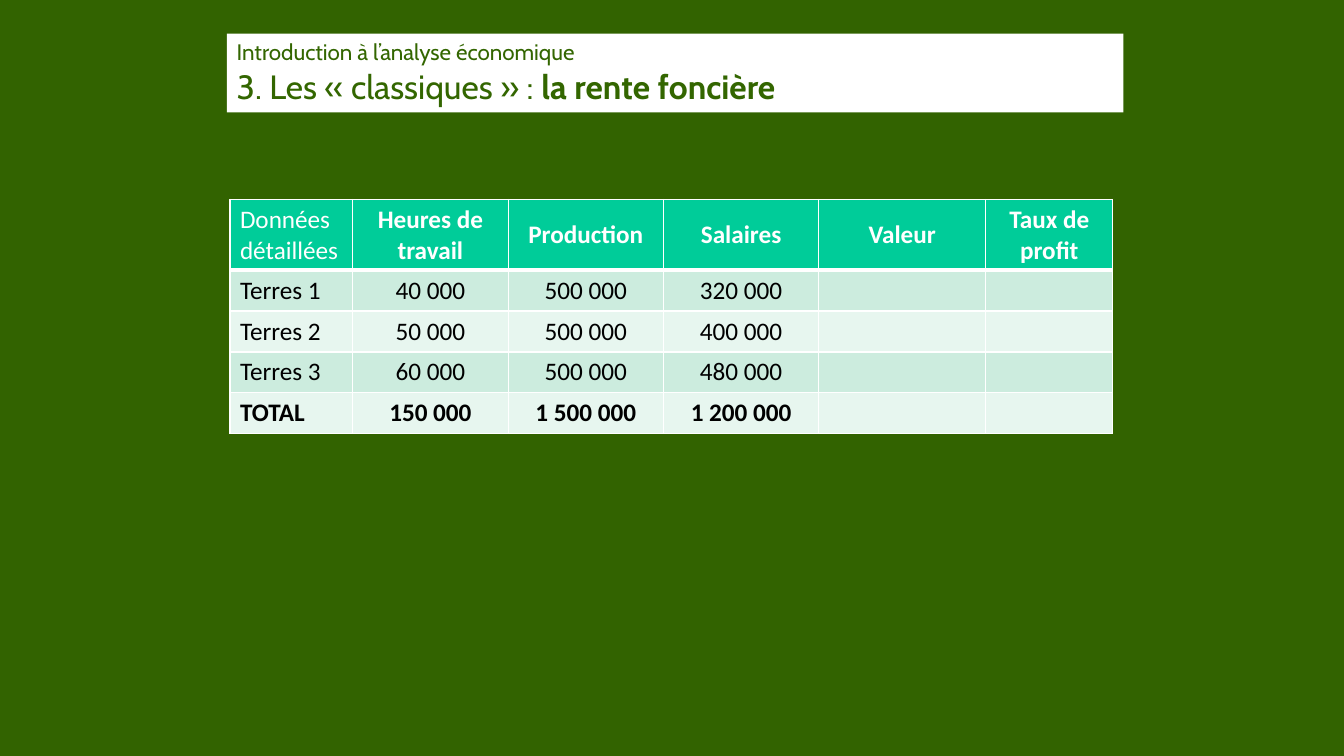
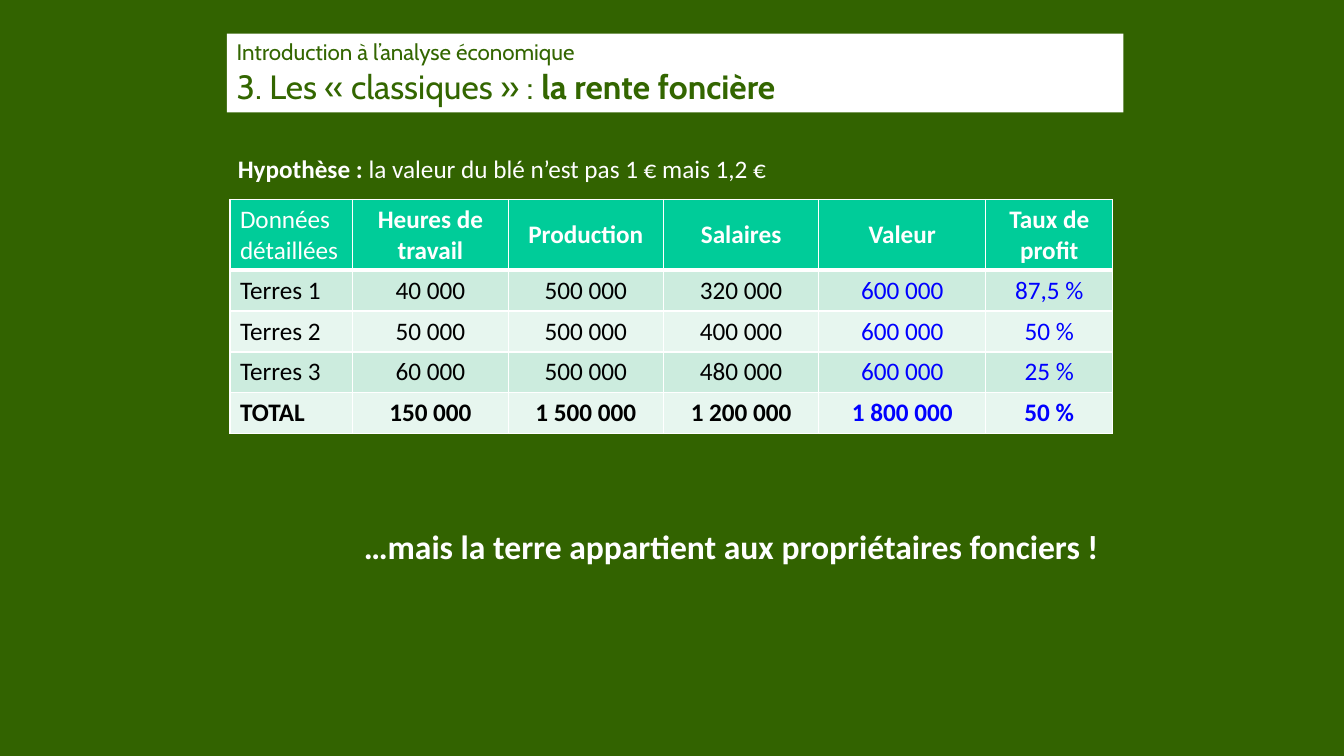
import dataclasses

import lxml.etree
import pptx
import pptx.dml.color
import pptx.enum.shapes
import pptx.enum.text
import pptx.oxml.ns
import pptx.util

EMU_PER_PX = 9525
SLIDE_BOX = (0, 0, 1280, 720)
BLANK_LAYOUT = 6
ALIGN = pptx.enum.text.PP_ALIGN
ANCHOR = pptx.enum.text.MSO_ANCHOR


@dataclasses.dataclass(frozen=True)
class Theme:
    background: str = "326300"
    title_ink: str = "336600"
    white: str = "FFFFFF"
    black: str = "000000"
    result: str = "0000FF"
    header: str = "00CC99"
    bands: tuple = ("CCECDE", "E7F6EF")
    title_font: str = "Cabin"
    body_font: str = "Calibri"
    course_size: int = 16
    title_size: int = 24
    body_size: int = 18
    closing_size: int = 24
    thin_line: int = 1
    thick_line: int = 3


THEME = Theme()

COURSE = "Introduction à l’analyse économique"
CHAPTER = "3. Les « classiques » : "
TOPIC = "la rente foncière"

COLUMN_WIDTHS = (117, 148, 148, 148, 159, 121)
ROW_HEIGHTS = (67, 39, 39, 39, 39)
FIRST_RESULT_COLUMN = 4
HEADINGS = ("Données\ndétaillées", "Heures de travail", "Production",
            "Salaires", "Valeur", "Taux de profit")
LANDS = (
    ("Terres 1", "40 000", "500 000", "320 000"),
    ("Terres 2", "50 000", "500 000", "400 000"),
    ("Terres 3", "60 000", "500 000", "480 000"),
    ("TOTAL", "150 000", "1 500 000", "1 200 000"),
)
NO_RESULTS = (("", ""),) * len(LANDS)
RESULTS = (
    ("600 000", "87,5 %"),
    ("600 000", "50 %"),
    ("600 000", "25 %"),
    ("1 800 000", "50 %"),
)


def px(length):
    return pptx.util.Emu(length * EMU_PER_PX)


def rgb(color):
    return pptx.dml.color.RGBColor.from_string(color)


def place(box, left, top, width, height):
    return [px(length) for length in (box[0] + left, box[1] + top, width, height)]


def paint(target, color):
    target.fill.solid()
    target.fill.fore_color.rgb = rgb(color)


def style_span(span, size, color, bold=False, font=THEME.body_font):
    span.font.name = font
    span.font.size = pptx.util.Pt(size)
    span.font.bold = bold
    span.font.color.rgb = rgb(color)


def add_span(para, text, *style):
    span = para.add_run()
    span.text = text
    style_span(span, *style)


def fit_frame(frame):
    frame.word_wrap = True
    frame.auto_size = pptx.enum.text.MSO_AUTO_SIZE.SHAPE_TO_FIT_TEXT


def add_title_band(page, box):
    band = page.shapes.add_shape(pptx.enum.shapes.MSO_SHAPE.RECTANGLE,
                                 *place(box, 216, 32, 854, 75))
    band.shadow.inherit = False
    paint(band, THEME.white)
    band.line.fill.background()
    frame = band.text_frame
    fit_frame(frame)
    frame.vertical_anchor = ANCHOR.TOP
    frame.text = f"{COURSE}\n{CHAPTER}"
    course, title = frame.paragraphs
    for para, size in ((course, THEME.course_size), (title, THEME.title_size)):
        para.alignment = ALIGN.LEFT
        style_span(para.runs[0], size, THEME.title_ink, False, THEME.title_font)
    add_span(title, TOPIC, THEME.title_size, THEME.title_ink, True, THEME.title_font)


def add_border(cell, side, width):
    properties = cell._tc.get_or_add_tcPr()
    line = lxml.etree.SubElement(properties, pptx.oxml.ns.qn(f"a:ln{side}"),
                                 w=str(pptx.util.Pt(width)))
    fill = lxml.etree.SubElement(line, pptx.oxml.ns.qn("a:solidFill"))
    lxml.etree.SubElement(fill, pptx.oxml.ns.qn("a:srgbClr"), val=THEME.white)


def style_cell(cell, row, column):
    is_header, is_label = row == 0, column == 0
    thick_side = {0: "B", 1: "T"}.get(row)
    for side in "LRTB":
        add_border(cell, side, THEME.thick_line if side == thick_side else THEME.thin_line)
    if is_header:
        fill, ink, bold = THEME.header, THEME.white, not is_label
    else:
        fill = THEME.bands[(row - 1) % len(THEME.bands)]
        ink = THEME.result if column >= FIRST_RESULT_COLUMN else THEME.black
        bold = row == len(LANDS)
    paint(cell, fill)
    cell.vertical_anchor = ANCHOR.MIDDLE if is_header and not is_label else ANCHOR.TOP
    for para in cell.text_frame.paragraphs:
        para.alignment = ALIGN.LEFT if is_label else ALIGN.CENTER
        for span in para.runs:
            style_span(span, THEME.body_size, ink, bold)


def add_land_table(page, box, results):
    rows = [HEADINGS] + [land + result for land, result in zip(LANDS, results)]
    table = page.shapes.add_table(
        len(rows), len(HEADINGS),
        *place(box, 219, 190, sum(COLUMN_WIDTHS), sum(ROW_HEIGHTS))).table
    table.first_row = False
    table.horz_banding = False
    for column, width in zip(table.columns, COLUMN_WIDTHS):
        column.width = px(width)
    for row, height in zip(table.rows, ROW_HEIGHTS):
        row.height = px(height)
    for row, texts in enumerate(rows):
        for column, text in enumerate(texts):
            cell = table.cell(row, column)
            cell.text_frame.text = text
            style_cell(cell, row, column)


def add_note(page, area, alignment, size, spans):
    note = page.shapes.add_textbox(*area)
    fit_frame(note.text_frame)
    para = note.text_frame.paragraphs[0]
    para.alignment = alignment
    for text, bold in spans:
        add_span(para, text, size, THEME.white, bold)


def add_hypothesis(page, box):
    add_note(page, place(box, 217, 141, 710, 38), ALIGN.LEFT, THEME.body_size,
             (("Hypothèse : ", True),
              ("la valeur du blé n’est pas 1 € mais 1,2 €", False)))


def add_closing(page, box):
    add_note(page, place(box, 216, 496, 840, 49), ALIGN.RIGHT, THEME.closing_size,
             (("…mais la terre appartient aux propriétaires fonciers !", True),))


def add_land_page(deck, results):
    page = deck.slides.add_slide(deck.slide_layouts[BLANK_LAYOUT])
    paint(page.background, THEME.background)
    add_title_band(page, SLIDE_BOX)
    add_land_table(page, SLIDE_BOX, results)
    return page


def main():
    deck = pptx.Presentation()
    deck.slide_width, deck.slide_height = (px(length) for length in SLIDE_BOX[2:])
    add_land_page(deck, NO_RESULTS)
    answer_page = add_land_page(deck, RESULTS)
    add_hypothesis(answer_page, SLIDE_BOX)
    add_closing(answer_page, SLIDE_BOX)
    deck.save("out.pptx")


if __name__ == "__main__":
    main()
